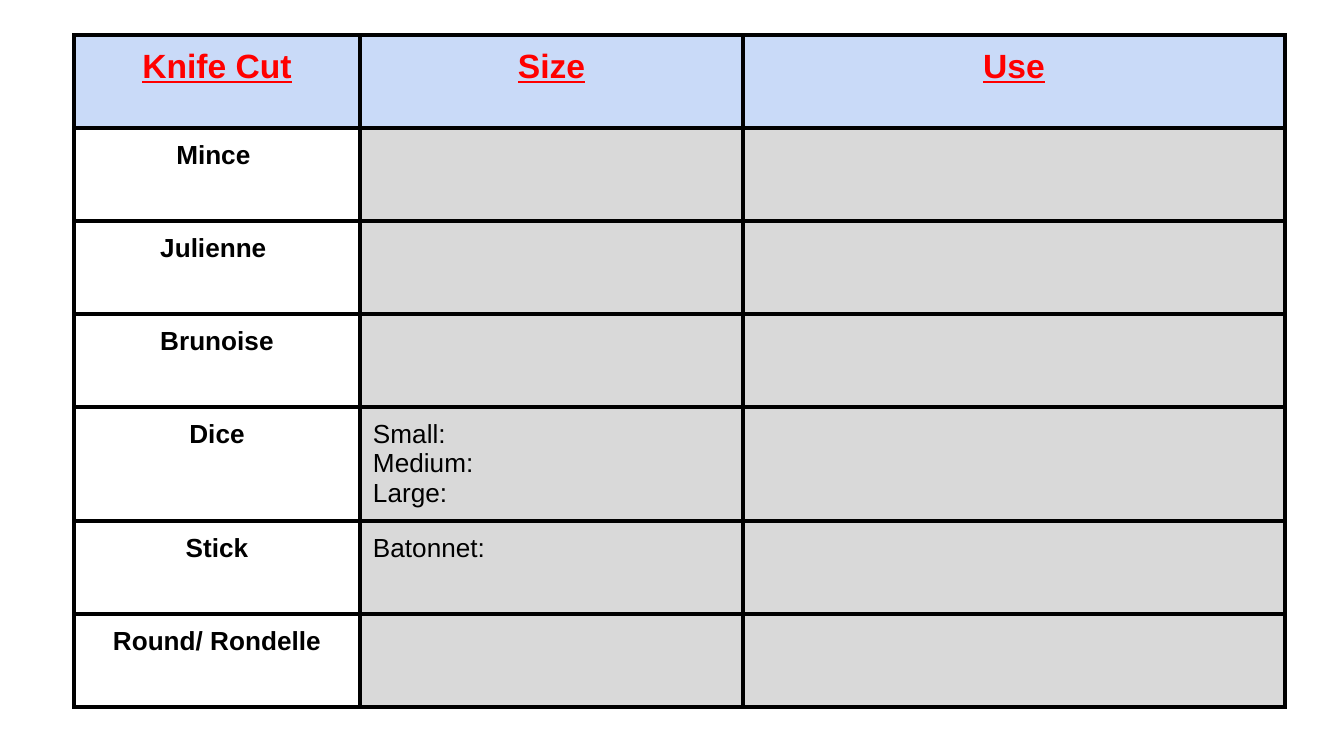
"""Build a worksheet slide listing knife cuts with their sizes and uses."""
from dataclasses import dataclass

from lxml.etree import SubElement
from pptx import Presentation
from pptx.dml.color import RGBColor
from pptx.enum.text import MSO_ANCHOR, PP_ALIGN as Align
from pptx.oxml.ns import qn
from pptx.util import Emu, Pt

EMU_PER_PX = 914400 / 134.4
COLUMN_WIDTHS = (286, 383, 542)
ROW_HEIGHT = 93
CELL_MARGIN = 13
BORDER_COLOR = "000000"
BORDER_WIDTH = Pt(2.25)


@dataclass(frozen=True)
class CellStyle:
    fill: str
    color: str = "000000"
    size: int = 14
    bold: bool = False
    underline: bool = False
    align: Align = Align.LEFT


@dataclass(frozen=True)
class KnifeCut:
    name: str
    sizes: tuple[str, ...] = ()
    uses: tuple[str, ...] = ()


HEADING = CellStyle("C9DAF8", "FF0000", 18, True, True, Align.CENTER)
CUT_NAME = CellStyle("FFFFFF", bold=True, align=Align.CENTER)
ANSWER = CellStyle("D9D9D9")

HEADINGS = ("Knife Cut", "Size", "Use")
KNIFE_CUTS = (
    KnifeCut("Mince "),
    KnifeCut("Julienne "),
    KnifeCut("Brunoise"),
    KnifeCut("Dice", ("Small:", "Medium:", "Large:")),
    KnifeCut("Stick", ("Batonnet:",)),
    KnifeCut("Round/ Rondelle"),
)


def px(length: int) -> Emu:
    """Turn pixels into EMU."""
    return Emu(round(length * EMU_PER_PX))


def rgb(color: str) -> RGBColor:
    """Turn a hex string into a colour."""
    return RGBColor.from_string(color)


def add_borders(cell) -> None:
    """Draw a solid line on all four sides of a cell."""
    properties = cell._tc.get_or_add_tcPr()
    for side in ("lnL", "lnR", "lnT", "lnB"):
        line = SubElement(properties, qn(f"a:{side}"), w=str(BORDER_WIDTH))
        solid = SubElement(line, qn("a:solidFill"))
        SubElement(solid, qn("a:srgbClr"), val=BORDER_COLOR)


def fill_cell(cell, lines: tuple[str, ...], style: CellStyle) -> None:
    """Style a cell and write one paragraph per line."""
    add_borders(cell)
    cell.fill.solid()
    cell.fill.fore_color.rgb = rgb(style.fill)
    cell.vertical_anchor = MSO_ANCHOR.TOP
    cell.margin_left = cell.margin_right = px(CELL_MARGIN)
    cell.margin_top = cell.margin_bottom = px(CELL_MARGIN)
    frame = cell.text_frame
    for index, line in enumerate(lines):
        paragraph = frame.add_paragraph() if index else frame.paragraphs[0]
        paragraph.alignment = style.align
        run = paragraph.add_run()
        run.text = line
        run.font.name = "Arial"
        run.font.size = Pt(style.size)
        run.font.bold = style.bold
        run.font.underline = style.underline
        run.font.color.rgb = rgb(style.color)


def add_cut_table(slide, left: int, top: int) -> None:
    """Add the table of knife cuts."""
    row_count = len(KNIFE_CUTS) + 1
    table = slide.shapes.add_table(
        row_count, len(HEADINGS), px(left), px(top),
        px(sum(COLUMN_WIDTHS)), px(ROW_HEIGHT * row_count),
    ).table
    table.first_row = table.horz_banding = False
    for column, width in zip(table.columns, COLUMN_WIDTHS):
        column.width = px(width)
    for row in table.rows:
        row.height = px(ROW_HEIGHT)
    for column, heading in enumerate(HEADINGS):
        fill_cell(table.cell(0, column), (heading,), HEADING)
    for row, cut in enumerate(KNIFE_CUTS, start=1):
        fill_cell(table.cell(row, 0), (cut.name,), CUT_NAME)
        fill_cell(table.cell(row, 1), cut.sizes, ANSWER)
        fill_cell(table.cell(row, 2), cut.uses, ANSWER)


def main() -> None:
    """Create the presentation and save it."""
    presentation = Presentation()
    presentation.slide_width = px(1344)
    presentation.slide_height = px(756)
    slide = presentation.slides.add_slide(presentation.slide_layouts[6])
    add_cut_table(slide, 74, 35)
    presentation.save("out.pptx")


if __name__ == "__main__":
    main()
